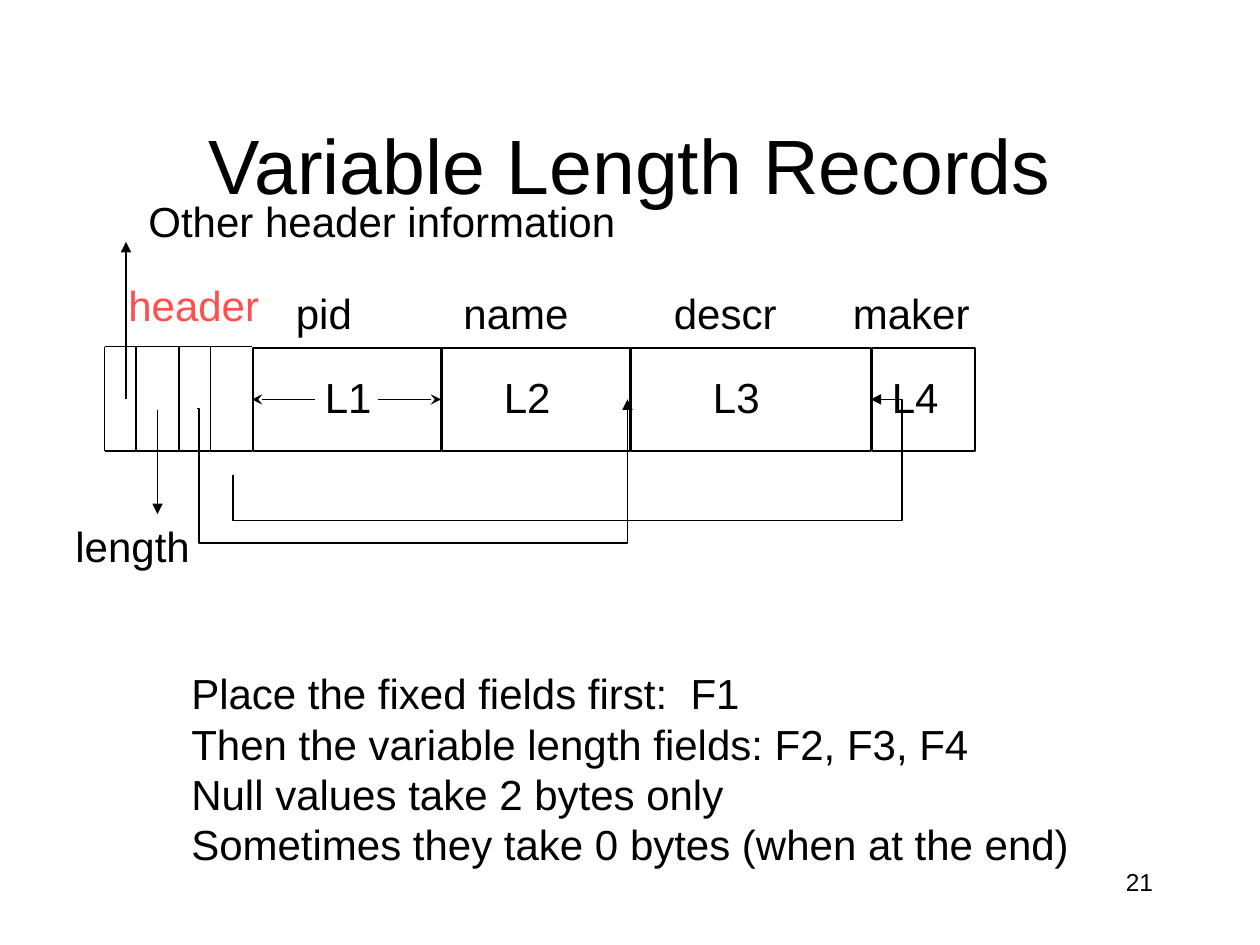
from lxml import etree
from pptx import Presentation
from pptx.dml.color import RGBColor
from pptx.enum.shapes import MSO_CONNECTOR, MSO_SHAPE
from pptx.enum.text import MSO_ANCHOR, PP_ALIGN
from pptx.oxml.ns import qn
from pptx.util import Inches, Pt

COLORS = {"ink": "000000", "header": "FF5050", "paper": "FFFFFF"}


def write_text(frame, text, size=24, color="ink", font="Arial", align=PP_ALIGN.LEFT):
    for index, line in enumerate(text.split("\n")):
        paragraph = frame.paragraphs[0] if index == 0 else frame.add_paragraph()
        paragraph.alignment = align
        run = paragraph.add_run()
        run.text = line
        run.font.size = Pt(size)
        run.font.name = font
        run.font.color.rgb = RGBColor.from_string(COLORS[color])


class RecordSlide:
    def __init__(self, presentation):
        self.slide = presentation.slides.add_slide(presentation.slide_layouts[6])
        self.shapes = self.slide.shapes
        fill = self.slide.background.fill
        fill.solid()
        fill.fore_color.rgb = RGBColor.from_string(COLORS["paper"])

    def style_line(self, shape, width, arrow=None):
        shape.line.color.rgb = RGBColor.from_string(COLORS["ink"])
        shape.line.width = Pt(width)
        if arrow:
            line = shape.line._get_or_add_ln()
            etree.SubElement(line, qn("a:tailEnd"), type=arrow)

    def text(self, text, left, top, width, height=0.51, wrap=False,
             anchor=MSO_ANCHOR.TOP, **style):
        box = self.shapes.add_textbox(*map(Inches, (left, top, width, height)))
        box.text_frame.word_wrap = wrap
        box.text_frame.vertical_anchor = anchor
        write_text(box.text_frame, text, **style)

    def field(self, left, top, width, height):
        shape = self.shapes.add_shape(
            MSO_SHAPE.RECTANGLE, *map(Inches, (left, top, width, height)))
        shape.shadow.inherit = False
        shape.fill.background()
        self.style_line(shape, 1)

    def line(self, start, end, width=0.75, arrow=None):
        connector = self.shapes.add_connector(
            MSO_CONNECTOR.STRAIGHT, *map(Inches, (*start, *end)))
        self.style_line(connector, width, arrow)
        etree.SubElement(connector._element.spPr, qn("a:effectLst"))

    def pointer(self, *points):
        start, *corners = [tuple(map(Inches, point)) for point in points]
        builder = self.shapes.build_freeform(*start)
        builder.add_line_segments(corners, close=False)
        shape = builder.convert_to_shape()
        shape.shadow.inherit = False
        shape.fill.background()
        self.style_line(shape, 0.75, "triangle")


presentation = Presentation()
presentation.slide_width = Inches(10)
presentation.slide_height = Inches(7.5)
record = RecordSlide(presentation)

record.text("21", 7.17, 6.83, 2.08, 0.5, wrap=True, size=14, align=PP_ALIGN.RIGHT)
record.text("Variable Length Records", 0.75, 0.67, 8.5, 1.25, wrap=True,
            anchor=MSO_ANCHOR.MIDDLE, size=44, align=PP_ALIGN.CENTER)

fields = [
    ("pid", 2.25, 0.65, "L1", 2.48, 2.01, 1.49),
    ("name", 3.58, 1.05, "L2", 3.9, 3.51, 1.49),
    ("descr", 5.25, 1.03, "L3", 5.56, 5.01, 1.9),
    ("maker", 6.67, 1.14, "L4", 6.98, 6.92, 0.82),
]
for name, name_left, name_width, length, length_left, left, width in fields:
    record.field(left, 2.76, width, 0.82)
    record.text(length, length_left, 2.9, 0.58)
    record.text(name, name_left, 2.23, name_width)

middle = 3.17
for start, end in ((2.5, 2), (3, 3.5)):
    record.line((start, middle), (end, middle), 1, "stealth")

header_top, header_bottom = 2.75, 3.58
for y in (header_top, header_bottom):
    record.line((0.83, y), (2, y))
for x in (0.83, 1.08, 1.42, 1.67):
    record.line((x, header_top), (x, header_bottom))

record.line((1, middle), (1, 1.92), arrow="triangle")
record.line((1.25, 3.25), (1.25, 4.08), arrow="triangle")
record.pointer((1.85, 3.77), (1.85, 4.13), (7.16, 4.13), (7.16, middle), (6.91, middle))
record.pointer((1.56, 3.24), (1.58, 3.24), (1.58, 4.31), (4.98, 4.31), (4.98, middle))

record.text("Other header information", 1.08, 1.5, 3.94)
record.text("header", 0.92, 2.17, 1.25, color="header")
record.text("length", 0.5, 4.08, 1.12)
record.text("Place the fixed fields first:  F1\n"
            "Then the variable length fields: F2, F3, F4\n"
            "Null values take 2 bytes only\n"
            "Sometimes they take 0 bytes (when at the end)", 1.42, 5.25, 7.24, 1.72)

presentation.save("out.pptx")
